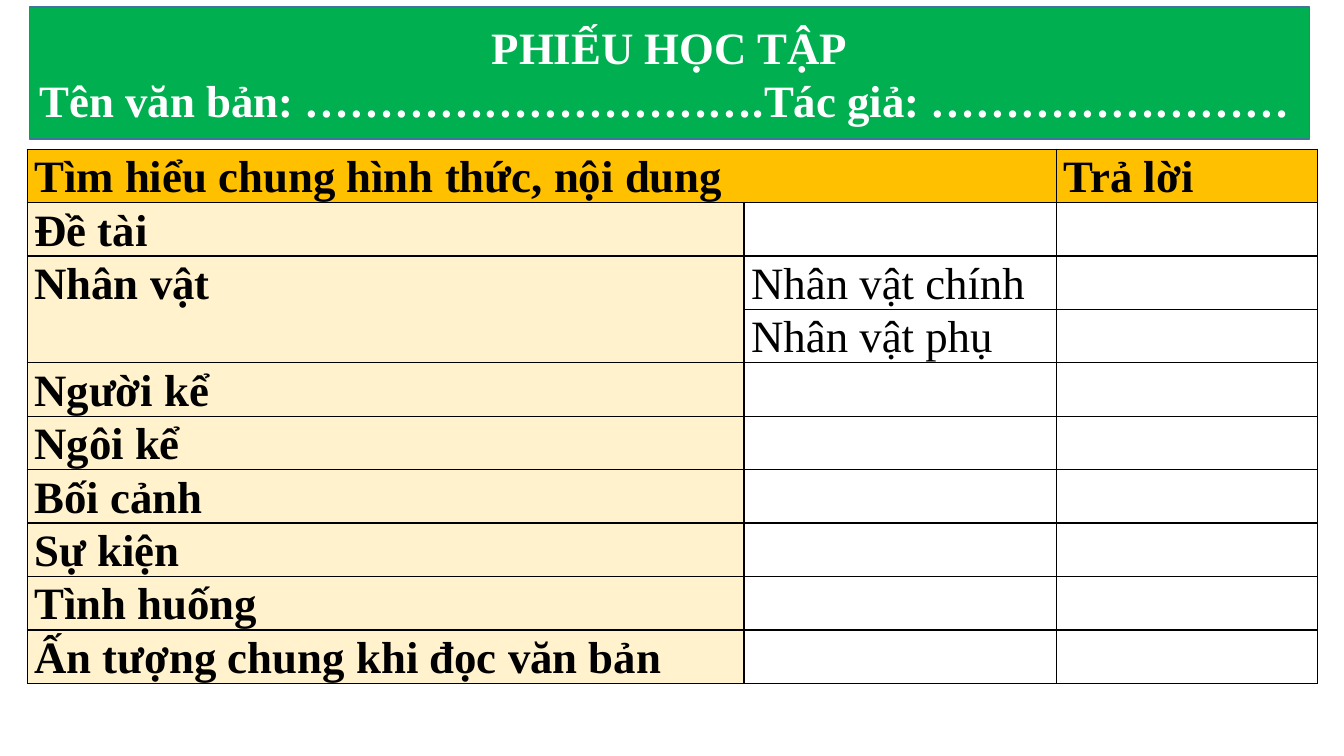
import pptx
import pptx.util
import pptx.dml.color
import pptx.enum.text
from lxml import etree

Inches, Pt = pptx.util.Inches, pptx.util.Pt
ALIGN = pptx.enum.text.PP_ALIGN

# Content
HEADING = [
    ("PHIẾU HỌC TẬP", ALIGN.CENTER),
    ("Tên văn bản: ………………………….Tác giả: ……………………", ALIGN.LEFT),
]
ROWS = [
    ("Tìm hiểu chung hình thức, nội dung", "", "Trả lời"),
    ("Đề tài", "", ""),
    ("Nhân vật", "Nhân vật chính", ""),
    ("", "Nhân vật phụ", ""),
    ("Người kể", "", ""),
    ("Ngôi kể", "", ""),
    ("Bối cảnh", "", ""),
    ("Sự kiện", "", ""),
    ("Tình huống", "", ""),
    ("Ấn tượng chung khi đọc văn bản", "", ""),
]
MERGES = [((0, 0), (0, 1)), ((2, 0), (3, 0))]
COL_WIDTHS = [7.11, 3.1, 2.59]
ROW_HEIGHT = 0.53
COLORS = {
    "banner": "00B050", "banner_line": "43739E", "banner_text": "FFFFFF",
    "header": "FFC000", "label": "FFF2CC", "answer": "FFFFFF",
    "text": "000000", "border": "000000",
}
FONT = {"name": "Times New Roman", "size": Pt(32)}
CELL_MARGINS = {"margin_left": Inches(0.07), "margin_right": Inches(0.07),
                "margin_top": 0, "margin_bottom": 0}
DRAWING_NS = "http://schemas.openxmlformats.org/drawingml/2006/main"


def rgb(key):
    return pptx.dml.color.RGBColor.from_string(COLORS[key])


def set_attrs(obj, values):
    for name, value in values.items():
        setattr(obj, name, value)


def write(p, text, color, bold, align, spacing):
    set_attrs(p, {"alignment": align, "line_spacing": spacing})
    r = p.add_run()
    r.text = text
    set_attrs(r.font, {**FONT, "bold": bold})
    r.font.color.rgb = rgb(color)


def add_borders(cell):
    tc_pr = cell._tc.get_or_add_tcPr()
    for side in ("lnL", "lnR", "lnT", "lnB"):
        ln = etree.SubElement(tc_pr, f"{{{DRAWING_NS}}}{side}", w=str(Pt(1)))
        fill = etree.SubElement(ln, f"{{{DRAWING_NS}}}solidFill")
        etree.SubElement(fill, f"{{{DRAWING_NS}}}srgbClr", val=COLORS["border"])


prs = pptx.Presentation()
prs.slide_width, prs.slide_height = Inches(13.33), Inches(7.5)
s = prs.slides.add_slide(prs.slide_layouts[5])

# Banner
banner = s.shapes.title
set_attrs(banner, {"left": Inches(0.29), "top": Inches(0.07),
                   "width": Inches(12.7), "height": Inches(1.31)})
banner.fill.solid()
banner.fill.fore_color.rgb = rgb("banner")
banner.line.color.rgb = rgb("banner_line")
banner.line.width = Pt(1)
tf = banner.text_frame
set_attrs(tf, {"word_wrap": True,
               "auto_size": pptx.enum.text.MSO_AUTO_SIZE.NONE,
               "vertical_anchor": pptx.enum.text.MSO_ANCHOR.MIDDLE})
for i, (text, align) in enumerate(HEADING):
    p = tf.add_paragraph() if i else tf.paragraphs[0]
    write(p, text, "banner_text", True, align, 1.0)

# Worksheet table
table = s.shapes.add_table(
    len(ROWS), len(COL_WIDTHS), Inches(0.27), Inches(1.48),
    Inches(sum(COL_WIDTHS)), Inches(ROW_HEIGHT * len(ROWS))).table
for column, width in zip(table.columns, COL_WIDTHS):
    column.width = Inches(width)
for row in table.rows:
    row.height = Inches(ROW_HEIGHT)

for r_index, texts in enumerate(ROWS):
    for c_index, text in enumerate(texts):
        cell = table.cell(r_index, c_index)
        is_header, is_label = r_index == 0, c_index == 0
        add_borders(cell)
        cell.fill.solid()
        cell.fill.fore_color.rgb = rgb(
            "header" if is_header else "label" if is_label else "answer")
        set_attrs(cell, CELL_MARGINS)
        if text:
            align = ALIGN.LEFT if is_label and not is_header else ALIGN.JUSTIFY
            write(cell.text_frame.paragraphs[0], text, "text",
                  is_header or is_label, align, 1.07)

for first, last in MERGES:
    table.cell(*first).merge(table.cell(*last))

prs.save("out.pptx")
